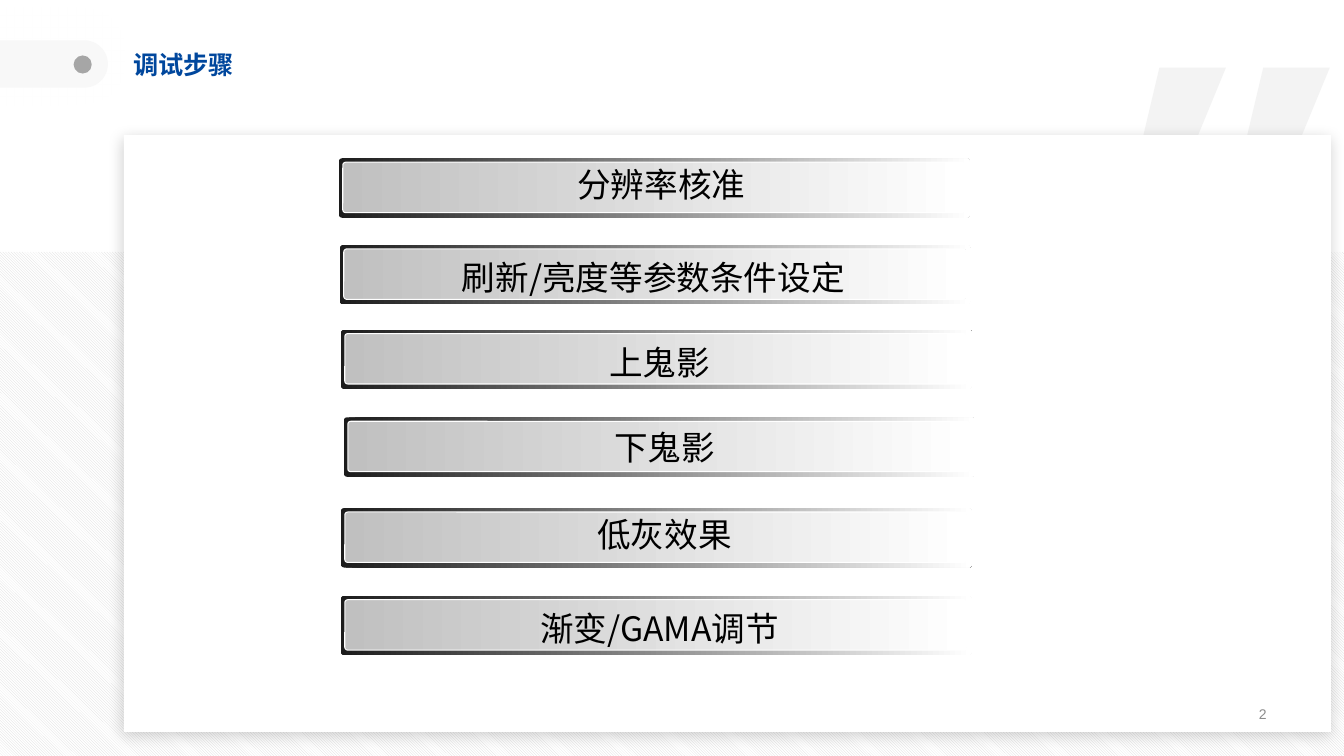
"""Build the slide listing the six debugging steps."""
from lxml.etree import SubElement
from pptx import Presentation
from pptx.dml.color import RGBColor
from pptx.enum.dml import MSO_PATTERN
from pptx.enum.shapes import MSO_SHAPE
from pptx.enum.text import MSO_ANCHOR, PP_ALIGN
from pptx.oxml.ns import qn
from pptx.util import Inches, Pt

TITLE = "调试步骤"
PAGE_NUMBER = "2"
STEPS = [
    {"text": "分辨率核准", "bar": (3.36, 1.57), "label": (3.75, 1.58)},
    {"text": "刷新/亮度等参数条件设定", "bar": (3.37, 2.43), "label": (3.67, 2.5)},
    {"text": "上鬼影", "bar": (3.38, 3.27), "label": (3.73, 3.34)},
    {"text": "下鬼影", "bar": (3.41, 4.14), "label": (3.78, 4.19)},
    {"text": "低灰效果", "bar": (3.38, 5.04), "label": (3.78, 5.05)},
    {"text": "渐变/GAMA调节", "bar": (3.38, 5.91), "label": (3.73, 5.98)},
]
COLORS = {
    "white": "FFFFFF", "black": "000000", "title": "00479D", "number": "8C8C8C",
    "pale": "D9D9D9", "tab": "F8F8F8", "dot": "A6A6A6", "shadow": "0D0D0D",
    "edge": "1C1C1C", "face": "C0C0C0",
}
CHINESE_FONT = "Noto Sans CJK SC"
QUOTE_LEFTS = (12.26, 11.23)
QUOTE_OUTLINE = [(0, 1.81), (0.27, 0.67), (0.93, 0.67), (0.46, 1.81)]
BAR_SIZE = (6.26, 0.59)
FACE_SIZE = (6.17, 0.5)
FACE_INSET = 0.04
LABEL_SIZE = (5.62, 0.51)


def rgb(name):
    """Return the named colour."""
    return RGBColor.from_string(COLORS[name])


def add_box(shapes, kind, left, top, width, height, fill=None, radius=None):
    """Add a preset shape without outline or shadow."""
    shape = shapes.add_shape(kind, Inches(left), Inches(top), Inches(width), Inches(height))
    shape.shadow.inherit = False
    shape.line.fill.background()
    if fill:
        shape.fill.solid()
        shape.fill.fore_color.rgb = rgb(fill)
    if radius is not None:
        shape.adjustments[0] = radius
    return shape


def add_shadow(shape, color, opacity, blur, distance, angle):
    """Give a shape an outer shadow."""
    effects = shape._element.spPr.find(qn("a:effectLst"))
    shadow = SubElement(effects, qn("a:outerShdw"), blurRad=str(Pt(blur)), dist=str(Pt(distance)),
                        dir=str(angle * 60000), algn="ctr", rotWithShape="0")
    tint = SubElement(shadow, qn("a:srgbClr"), val=COLORS[color])
    SubElement(tint, qn("a:alpha"), val=str(opacity * 1000))


def add_text(shapes, text, left, top, width, height, *, size, color, font=CHINESE_FONT,
             bold=False, align=PP_ALIGN.LEFT, anchor=MSO_ANCHOR.TOP, margins=(0.1, 0.05)):
    """Add a one-paragraph text box."""
    box = shapes.add_textbox(Inches(left), Inches(top), Inches(width), Inches(height))
    frame = box.text_frame
    frame.word_wrap = True
    frame.vertical_anchor = anchor
    frame.margin_left = frame.margin_right = Inches(margins[0])
    frame.margin_top = frame.margin_bottom = Inches(margins[1])
    paragraph = frame.paragraphs[0]
    paragraph.alignment = align
    run = paragraph.add_run()
    run.text = text
    run.font.size = Pt(size)
    run.font.bold = bold
    run.font.name = font
    run.font.color.rgb = rgb(color)
    SubElement(run._r.get_or_add_rPr(), qn("a:ea"), typeface=font)


def add_quote_mark(shapes, left):
    """Add one translucent slanted quote mark."""
    points = [(Inches(left + x), Inches(y)) for x, y in QUOTE_OUTLINE]
    builder = shapes.build_freeform(*points[0])
    builder.add_line_segments(points[1:], close=True)
    mark = builder.convert_to_shape()
    mark.shadow.inherit = False
    mark.line.fill.background()
    mark.fill.solid()
    mark.fill.fore_color.rgb = rgb("pale")
    tint = mark._element.spPr.find(qn("a:solidFill"))[0]
    SubElement(tint, qn("a:alpha"), val="30000")


def add_fading_bar(shapes, left, top, size, color):
    """Add a rounded bar that fades to white at its right end."""
    bar = add_box(shapes, MSO_SHAPE.ROUNDED_RECTANGLE, left, top, *size, radius=0.058)
    bar.fill.gradient()
    bar.fill.gradient_angle = 0
    for stop, position, name in zip(bar.fill.gradient_stops, (0, 1), (color, "white")):
        stop.position = position
        stop.color.rgb = rgb(name)
    return bar


def add_step(slide, step):
    """Add a grouped step: dark edge, light face and label."""
    shapes = slide.shapes.add_group_shape().shapes
    left, top = step["bar"]
    add_fading_bar(shapes, left, top, BAR_SIZE, "edge")
    face = add_fading_bar(shapes, left + FACE_INSET, top + FACE_INSET, FACE_SIZE, "face")
    face.line.color.rgb = rgb("white")
    face.line.width = Pt(0.75)
    add_text(shapes, step["text"], *step["label"], *LABEL_SIZE, size=24, color="black",
             align=PP_ALIGN.CENTER)


def main():
    """Build and save the presentation."""
    presentation = Presentation()
    presentation.slide_width = Inches(13.33)
    presentation.slide_height = Inches(7.5)
    slide = presentation.slides.add_slide(presentation.slide_layouts[6])
    shapes = slide.shapes

    for left in QUOTE_LEFTS:
        add_quote_mark(shapes, left)
    backdrop = add_box(shapes, MSO_SHAPE.RECTANGLE, 0, 2.5, 13.33, 5)
    backdrop.fill.patterned()
    backdrop.fill.pattern = MSO_PATTERN.LIGHT_DOWNWARD_DIAGONAL
    backdrop.fill.fore_color.rgb = rgb("pale")
    backdrop.fill.back_color.rgb = rgb("white")
    card = add_box(shapes, MSO_SHAPE.RECTANGLE, 1.23, 1.34, 11.97, 5.92, fill="white")
    add_shadow(card, "shadow", 20, 10, 3, 90)

    tab = add_box(shapes, MSO_SHAPE.ROUNDED_RECTANGLE, -0.28, 0.4, 1.35, 0.47,
                  fill="tab", radius=0.5)
    add_shadow(tab, "white", 100, 20, 8, 225)
    add_box(shapes, MSO_SHAPE.OVAL, 0.73, 0.55, 0.18, 0.18, fill="dot")
    add_text(shapes, TITLE, 1.19, 0.42, 3.21, 0.43, size=18, color="title", bold=True,
             margins=(0.13, 0.07))
    add_text(shapes, PAGE_NUMBER, 9.71, 6.91, 2.95, 0.35, size=10, color="number",
             font="Arial", align=PP_ALIGN.RIGHT, anchor=MSO_ANCHOR.MIDDLE)
    for step in STEPS:
        add_step(slide, step)
    presentation.save("out.pptx")


if __name__ == "__main__":
    main()
